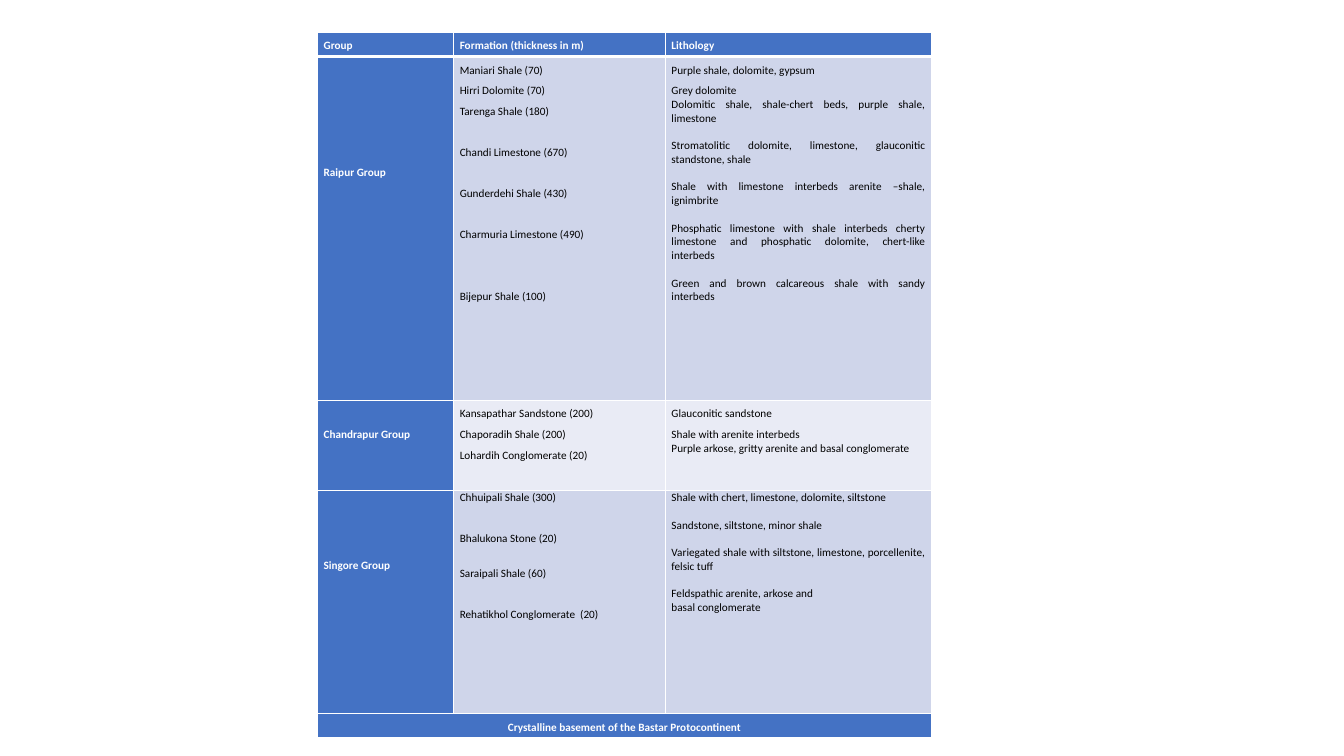
from lxml.etree import SubElement
from pptx import Presentation
from pptx.dml.color import RGBColor
from pptx.enum.text import PP_ALIGN as Align
from pptx.oxml.ns import qn
from pptx.util import Inches, Pt

COLORS = {"head": "4472C4", "band": "CFD5EA", "pale": "E9EBF5",
          "white": "FFFFFF", "black": "000000"}
LINE_HEIGHT = 9.77  # points, one single-spaced line of 8 pt text
WIDE = 1.5          # line spacing of most paragraphs

COLUMN_WIDTHS = [1.35, 2.1, 2.64]
ROW_HEIGHTS = [0.24, 3.41, 0.9, 2.21, 0.24]

# Each paragraph: text, line spacing, gap above in single lines
strata = [
    # Header
    [[("Group", WIDE, 0)],
     [("Formation (thickness in m)", WIDE, 0)],
     [("Lithology", WIDE, 0)]],
    # Raipur
    [[("Raipur Group", WIDE, 7.5)],
     [("Maniari Shale (70)", WIDE, 0),
      ("Hirri Dolomite (70)", WIDE, 0),
      ("Tarenga Shale (180)", WIDE, 0),
      ("Chandi Limestone (670)", WIDE, 1.5),
      ("Gunderdehi Shale (430)", WIDE, 1.5),
      ("Charmuria Limestone (490)", WIDE, 1.5),
      ("Bijepur Shale (100)", WIDE, 3)],
     [("Purple shale, dolomite, gypsum", WIDE, 0),
      ("Grey dolomite", WIDE, 0),
      ("Dolomitic shale, shale-chert beds, purple shale, limestone", 1, 0),
      ("Stromatolitic dolomite, limestone, glauconitic standstone, shale", 1, 1),
      ("Shale with limestone interbeds arenite –shale, ignimbrite", 1, 1),
      ("Phosphatic limestone with shale interbeds cherty limestone and "
       "phosphatic dolomite, chert-like interbeds", 1, 1),
      ("Green and brown calcareous shale with sandy interbeds", 1, 1)]],
    # Chandrapur
    [[("Chandrapur Group", WIDE, 1.5)],
     [("Kansapathar Sandstone (200)", WIDE, 0),
      ("Chaporadih Shale (200)", WIDE, 0),
      ("Lohardih Conglomerate (20)", WIDE, 0)],
     [("Glauconitic sandstone", WIDE, 0),
      ("Shale with arenite interbeds", WIDE, 0),
      ("Purple arkose, gritty arenite and basal conglomerate", 1, 0)]],
    # Singore
    [[("Singore Group", WIDE, 4.5)],
     [("Chhuipali Shale (300)", 1, 0),
      ("Bhalukona Stone (20)", 1, 2),
      ("Saraipali Shale (60)", WIDE, 1),
      ("Rehatikhol Conglomerate  (20)", WIDE, 1.5)],
     [("Shale with chert, limestone, dolomite, siltstone", 1, 0),
      ("Sandstone, siltstone, minor shale", 1, 1),
      ("Variegated shale with siltstone, limestone, porcellenite, felsic tuff", 1, 1),
      ("Feldspathic arenite, arkose and", 1, 1),
      ("basal conglomerate", 1, 0)]],
    # Basement
    [[("Crystalline basement of the Bastar Protocontinent", WIDE, 0)], [], []],
]
BASEMENT = len(strata) - 1


def add_borders(cell, widths):
    """Draw white cell borders; widths are in points by side."""
    for side, width in widths.items():
        border = SubElement(cell._tc.get_or_add_tcPr(), qn(f"a:ln{side}"), w=str(Pt(width)))
        fill = SubElement(border, qn("a:solidFill"))
        SubElement(fill, qn("a:srgbClr"), val=COLORS["white"])


def write_paragraphs(cell, paragraphs, color, bold, align):
    """Fill a cell; the gap above its first paragraph becomes the top margin."""
    frame = cell.text_frame
    for index, (text, spacing, gap) in enumerate(paragraphs):
        paragraph = frame.add_paragraph() if index else frame.paragraphs[0]
        space = Pt(LINE_HEIGHT * gap)
        if index:
            paragraph.space_before = space
        else:
            cell.margin_top = space
        paragraph.alignment = align
        paragraph.line_spacing = float(spacing)
        run = paragraph.add_run()
        run.text = text
        for name, value in {"name": "Calibri", "size": Pt(8), "bold": bold}.items():
            setattr(run.font, name, value)
        run.font.color.rgb = RGBColor.from_string(COLORS[color])


prs = Presentation()
prs.slide_width, prs.slide_height = Inches(13.33), Inches(7.5)
slide = prs.slides.add_slide(prs.slide_layouts[6])

# Stratigraphic table
stratigraphy = slide.shapes.add_table(
    len(ROW_HEIGHTS), len(COLUMN_WIDTHS), Inches(3.15), Inches(0.32),
    Inches(sum(COLUMN_WIDTHS)), Inches(sum(ROW_HEIGHTS))).table
stratigraphy.first_row = stratigraphy.horz_banding = False
for column, width in zip(stratigraphy.columns, COLUMN_WIDTHS):
    column.width = Inches(width)
for row, height in zip(stratigraphy.rows, ROW_HEIGHTS):
    row.height = Inches(height)

# Cells: heading colour on the edges, alternating bands inside
for r, cells in enumerate(strata):
    for c, paragraphs in enumerate(cells):
        cell = stratigraphy.cell(r, c)
        margins = {"margin_left": 0.06, "margin_right": 0.06,
                   "margin_top": 0, "margin_bottom": 0}
        for name, value in margins.items():
            setattr(cell, name, Inches(value))
        is_heading = r in (0, BASEMENT) or c == 0
        add_borders(cell, {"L": 1, "R": 1, "T": 3 if r == 1 else 1, "B": 3 if r == 0 else 1})
        cell.fill.solid()
        shade = "head" if is_heading else "band" if r % 2 else "pale"
        cell.fill.fore_color.rgb = RGBColor.from_string(COLORS[shade])
        write_paragraphs(cell, paragraphs, "white" if is_heading else "black", is_heading,
                         Align.CENTER if r == BASEMENT else Align.JUSTIFY)

# Basement spans the full width
stratigraphy.cell(BASEMENT, 0).merge(stratigraphy.cell(BASEMENT, 2))

prs.save("out.pptx")
